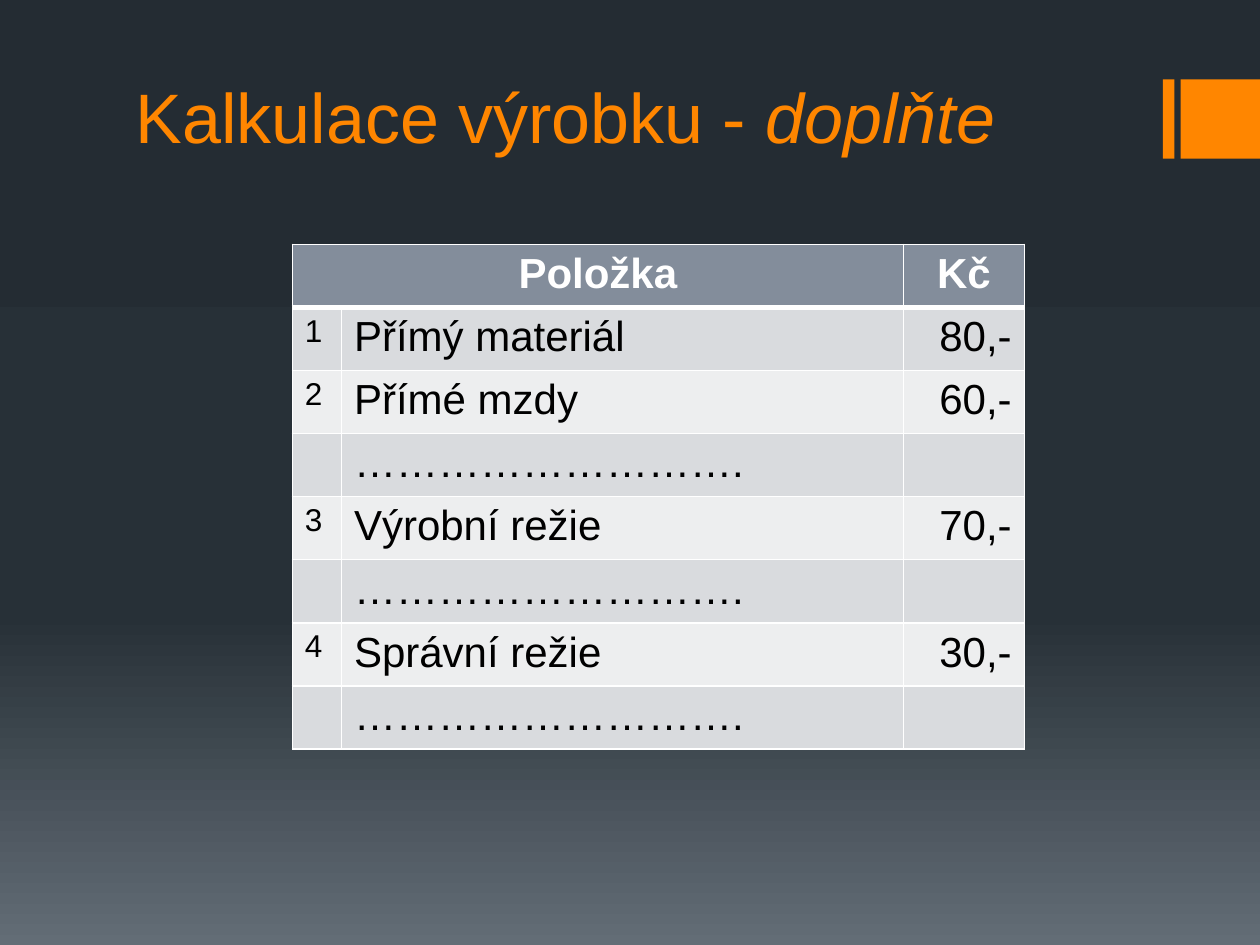
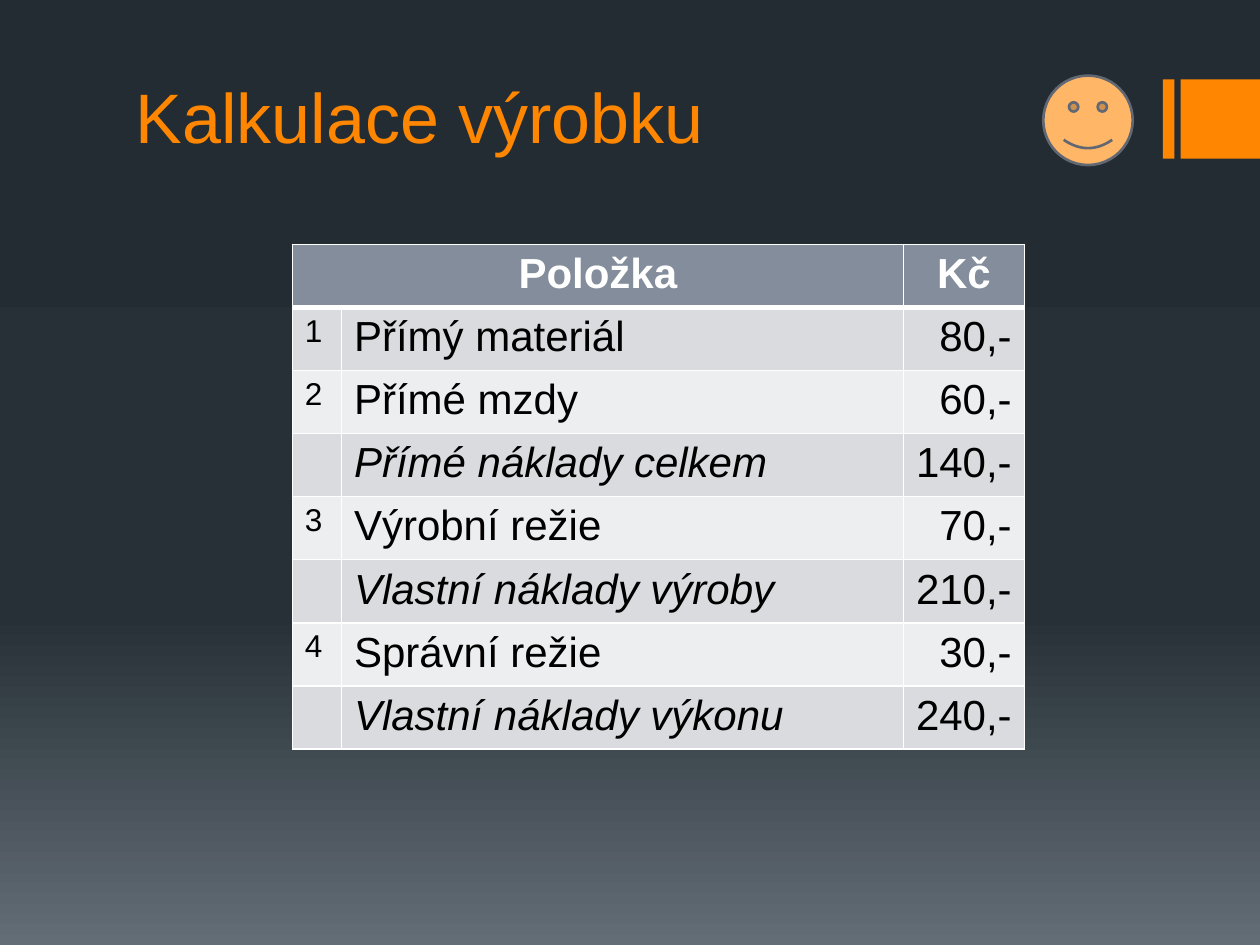
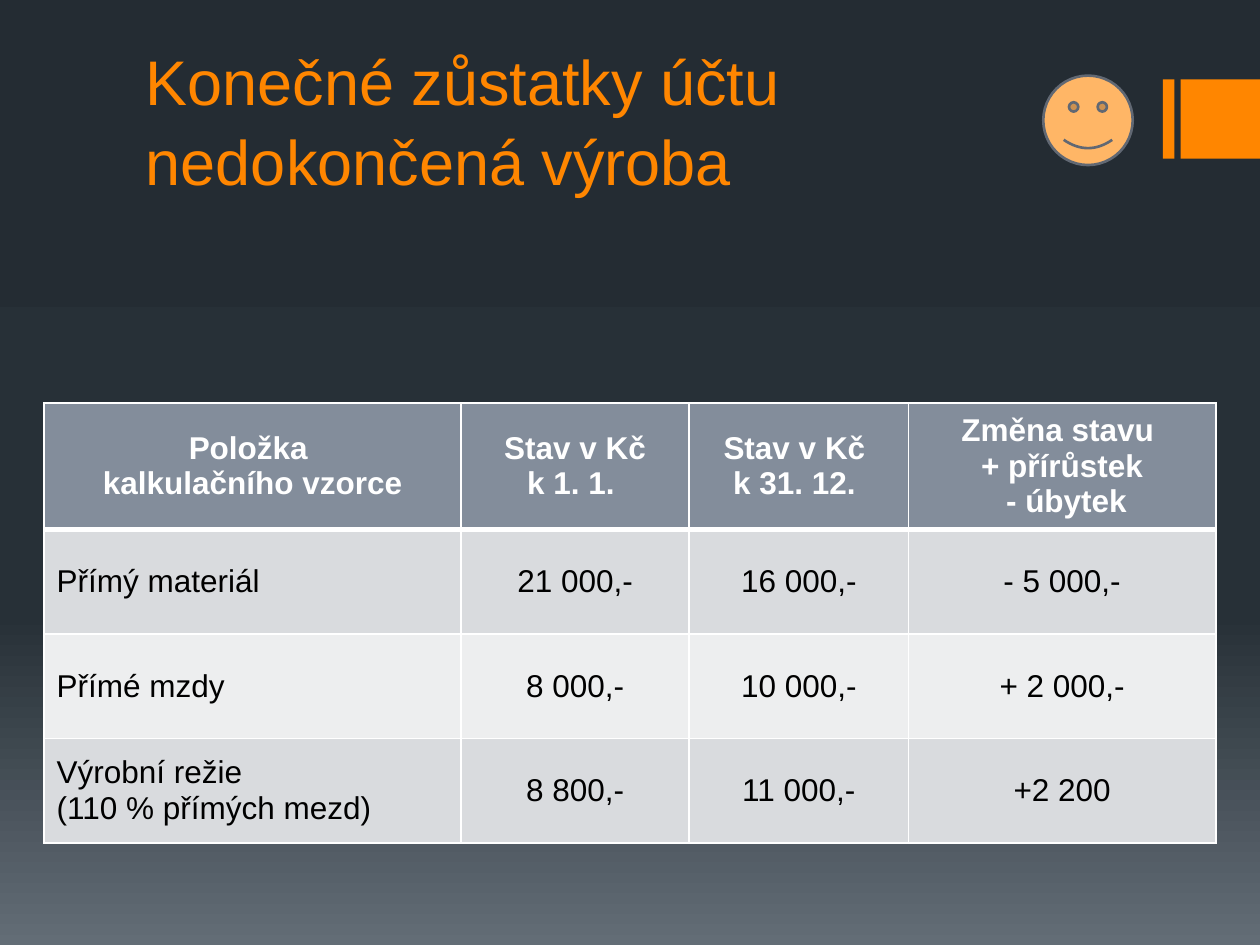
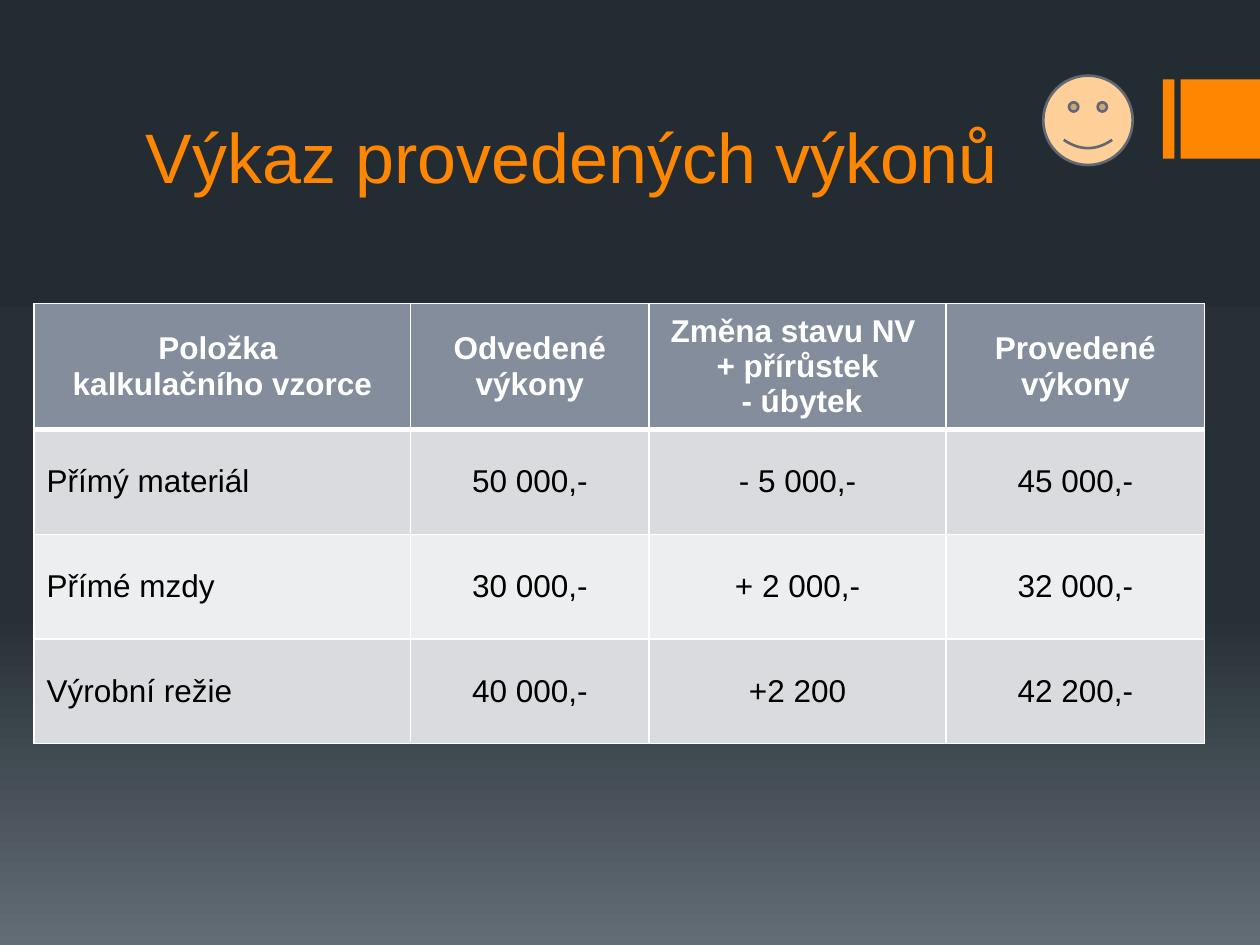
from copy import deepcopy
from dataclasses import dataclass

from lxml import etree
from pptx import Presentation
from pptx.dml.color import RGBColor
from pptx.enum.shapes import MSO_SHAPE
from pptx.enum.text import MSO_ANCHOR, PP_ALIGN
from pptx.oxml.ns import qn
from pptx.util import Inches, Pt

RECT, SMILEY = MSO_SHAPE.RECTANGLE, MSO_SHAPE.SMILEY_FACE
TOP, MIDDLE, BOTTOM = MSO_ANCHOR.TOP, MSO_ANCHOR.MIDDLE, MSO_ANCHOR.BOTTOM
LEFT, CENTER, RIGHT = PP_ALIGN.LEFT, PP_ALIGN.CENTER, PP_ALIGN.RIGHT


@dataclass(frozen=True)
class Theme:
    font: str = "Arial"
    accent: str = "FF8600"
    background: tuple = ((0, "242C33"), (0.65, "273037"), (1, "636D76"))
    header: str = "838D9B"
    bands: tuple = ("D9DBDE", "EDEEEF")
    border: str = "FFFFFF"
    header_text: str = "FFFFFF"
    body_text: str = "000000"
    face_line: str = "616873"
    title: int = 40
    title_small: int = 36
    large: int = 24
    normal: int = 18


T = Theme()


def style_run(r, color, **formats):
    formats = {"name": T.font, **formats}
    for name, value in formats.items():
        setattr(r.font, name, value)
    r.font.color.rgb = RGBColor.from_string(color)


def set_borders(cell, top, bottom):
    """Draw all four cell sides; top and bottom are line widths in points."""
    tcPr = cell._tc.get_or_add_tcPr()
    for side, width in (("L", 1), ("R", 1), ("T", top), ("B", bottom)):
        ln = etree.SubElement(tcPr, qn(f"a:ln{side}"), w=str(Pt(width)))
        fill = etree.SubElement(ln, qn("a:solidFill"))
        etree.SubElement(fill, qn("a:srgbClr"), val=T.border)


def costing_rows(subtotals):
    direct, production, total = subtotals
    return [
        ("Položka", "", "Kč"),
        ("1", "Přímý materiál", "80,-"),
        ("2", "Přímé mzdy", "60,-"),
        ("", *direct),
        ("3", "Výrobní režie", "70,-"),
        ("", *production),
        ("4", "Správní režie", "30,-"),
        ("", *total),
    ]


BLANK_LINE = ("……………………….", "")
COSTING = {
    "title_box": (0.98, 0.36, 8, 0.94), "title_size": T.title,
    "table_at": (2.32, 1.94), "cols": (0.39, 4.46, 0.96), "row_height": 0.41,
    "sizes": (T.normal, T.large, T.large), "header_size": T.large,
    "aligns": (LEFT, LEFT, RIGHT), "anchor": TOP, "merge_header": True,
}
STATEMENT = {
    "title_box": (1.06, 0.36, 8, 1.26), "row_height": 0.83,
    "sizes": (T.normal,) * 4, "header_size": T.normal,
    "aligns": (LEFT, CENTER, CENTER, CENTER), "anchor": MIDDLE, "merge_header": False,
}
SLIDES = [
    {
        **COSTING, "title": "Kalkulace výrobku - ", "title_italic": "doplňte",
        "rows": costing_rows([BLANK_LINE] * 3),
    },
    {
        **COSTING, "title": "Kalkulace výrobku", "face": "FFB666",
        "rows": costing_rows([
            ("Přímé náklady celkem", "140,-"),
            ("Vlastní náklady výroby", "210,-"),
            ("Vlastní náklady výkonu", "240,-"),
        ]),
        "italic_rows": (3, 5, 7),
    },
    {
        **STATEMENT, "title": "Konečné zůstatky účtu nedokončená výroba",
        "title_size": T.title_small, "face": "FFB666",
        "table_at": (0.35, 3.2), "cols": (3.31, 1.81, 1.74, 2.44),
        "rows": [
            ("Položka \nkalkulačního vzorce", "Stav v Kč\nk 1. 1. ",
             "Stav v Kč \nk 31. 12. ", "Změna stavu \n+ přírůstek\n - úbytek"),
            ("Přímý materiál", "21 000,-", "16 000,-", "- 5 000,-"),
            ("Přímé mzdy", "8 000,-", "10 000,-", "+ 2 000,-"),
            ("Výrobní režie\n(110 % přímých mezd)", "8 800,-", "11 000,-", "+2 200"),
        ],
    },
    {
        **STATEMENT, "title": "Výkaz provedených výkonů",
        "title_size": T.title, "face": "FFCF99",
        "table_at": (0.27, 2.41), "cols": (2.99, 1.89, 2.36, 2.05),
        "rows": [
            ("Položka \nkalkulačního vzorce", "Odvedené výkony",
             "Změna stavu NV \n+ přírůstek\n - úbytek", "Provedené výkony"),
            ("Přímý materiál", "50 000,-", "- 5 000,-", "45 000,-"),
            ("Přímé mzdy", "30 000,-", "+ 2 000,-", "32 000,-"),
            ("Výrobní režie", "40 000,-", "+2 200", "42 200,-"),
        ],
    },
]

prs = Presentation()
prs.slide_width, prs.slide_height = Inches(10), Inches(7.5)

for page in SLIDES:
    s = prs.slides.add_slide(prs.slide_layouts[6])

    # Background gradient, running downwards
    fill = s.background.fill
    fill.gradient()
    fill.gradient_angle = 270
    gs = s.background._cSld.find(".//" + qn("a:gsLst"))
    gs.insert(1, deepcopy(gs[0]))
    for stop, (position, color) in zip(fill.gradient_stops, T.background):
        stop.position = position
        stop.color.rgb = RGBColor.from_string(color)

    # Accent bars and face
    marks = [(RECT, (9.23, 0.63, 0.09, 0.63), T.accent),
             (RECT, (9.37, 0.63, 0.63, 0.63), T.accent)]
    if "face" in page:
        marks.append((SMILEY, (8.28, 0.6, 0.71, 0.71), page["face"]))
    for kind, box, color in marks:
        sp = s.shapes.add_shape(kind, *map(Inches, box))
        sp.shadow.inherit = False
        sp.fill.solid()
        sp.fill.fore_color.rgb = RGBColor.from_string(color)
        if kind == SMILEY:
            sp.line.color.rgb = RGBColor.from_string(T.face_line)
            sp.line.width = Pt(1.5)
        else:
            sp.line.fill.background()

    # Title
    tf = s.shapes.add_textbox(*map(Inches, page["title_box"])).text_frame
    tf.word_wrap = True
    tf.vertical_anchor = BOTTOM
    p = tf.paragraphs[0]
    p.line_spacing = 1.05
    for text, italic in ((page["title"], False), (page.get("title_italic"), True)):
        if text:
            r = p.add_run()
            r.text = text
            style_run(r, T.accent, size=Pt(page["title_size"]), italic=italic)

    # Table
    rows, cols = page["rows"], page["cols"]
    table = s.shapes.add_table(
        len(rows), len(cols), *map(Inches, page["table_at"]),
        Inches(sum(cols)), Inches(page["row_height"] * len(rows))).table
    for column, width in zip(table.columns, cols):
        column.width = Inches(width)
    if page["merge_header"]:
        table.cell(0, 0).merge(table.cell(0, 1))

    for i, row in enumerate(rows):
        header = i == 0
        table.rows[i].height = Inches(page["row_height"])
        for j, text in enumerate(row):
            cell = table.cell(i, j)
            set_borders(cell, top=3 if i == 1 else 1, bottom=3 if header else 1)
            cell.fill.solid()
            cell.fill.fore_color.rgb = RGBColor.from_string(
                T.header if header else T.bands[(i - 1) % 2])
            cell.vertical_anchor = page["anchor"]
            if not text:
                continue
            cell.text = text
            size = page["header_size"] if header else page["sizes"][j]
            for p in cell.text_frame.paragraphs:
                p.alignment = CENTER if header else page["aligns"][j]
                style_run(p.runs[0], T.header_text if header else T.body_text,
                          size=Pt(size), bold=header,
                          italic=j == 1 and i in page.get("italic_rows", ()))

prs.save("out.pptx")
